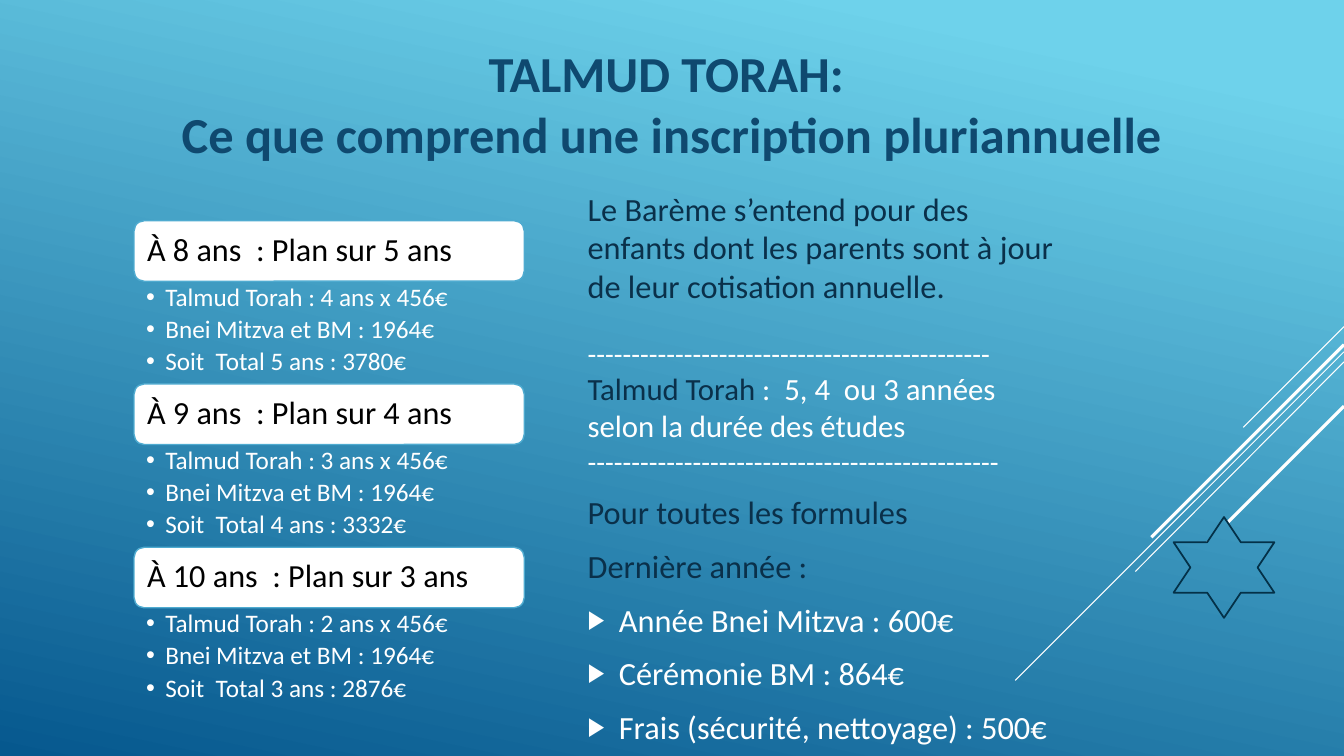
from dataclasses import dataclass

from lxml import etree
from pptx import Presentation
from pptx.dml.color import RGBColor
from pptx.enum.shapes import MSO_CONNECTOR, MSO_SHAPE
from pptx.enum.text import MSO_ANCHOR, PP_ALIGN
from pptx.oxml.ns import qn
from pptx.util import Inches, Pt

STRAIGHT = MSO_CONNECTOR.STRAIGHT
ROUNDED, STAR = MSO_SHAPE.ROUNDED_RECTANGLE, MSO_SHAPE.STAR_6_POINT
TOP, MIDDLE = MSO_ANCHOR.TOP, MSO_ANCHOR.MIDDLE
CENTER, JUSTIFY = PP_ALIGN.CENTER, PP_ALIGN.JUSTIFY


@dataclass
class Theme:
    font: str = "Calibri"
    sky: str = "6ED2EB"
    deep: str = "06588E"
    title: str = "0F496F"
    ink: str = "0A304A"
    star: str = "043148"
    border: str = "4FABD0"
    white: str = "FFFFFF"
    black: str = "000000"
    title_size: float = 36
    body_size: float = 23.1
    study_size: float = 22
    rule_size: float = 20.4
    plan_size: float = 23
    detail_size: float = 18


class SlideBuilder:
    def __init__(self, page, theme):
        self.page = page
        self.theme = theme

    def background(self, angle):
        """Fill the page with a gradient; angle is clockwise in degrees."""
        fill = self.page.background.fill
        fill.gradient()
        fill.gradient_angle = 360 - angle
        stops = ((0.1, self.theme.sky), (1, self.theme.deep))
        for stop, (position, color) in zip(fill.gradient_stops, stops):
            stop.position = position
            stop.color.rgb = RGBColor.from_string(color)

    def line(self, start, end, width):
        ends = [Inches(value) for value in (*start, *end)]
        connector = self.page.shapes.add_connector(STRAIGHT, *ends)
        connector.line.color.rgb = RGBColor.from_string(self.theme.white)
        connector.line.width = Pt(width)
        etree.SubElement(connector._element.spPr, qn("a:effectLst"))

    def shape(self, kind, place, border, width, fill=None):
        """Add a preset shape; without a fill it shows the page background."""
        box = self.page.shapes.add_shape(kind, *map(Inches, place))
        box.shadow.inherit = False
        box.line.color.rgb = RGBColor.from_string(border)
        box.line.width = Pt(width)
        if fill:
            box.fill.solid()
            box.fill.fore_color.rgb = RGBColor.from_string(fill)
        else:
            box._element.set("useBgFill", "1")

    def text(self, place, anchor=TOP, insets=(0.1, 0.05, 0.1, 0.05)):
        frame = self.page.shapes.add_textbox(*map(Inches, place)).text_frame
        sides = ("margin_left", "margin_top", "margin_right", "margin_bottom")
        formats = dict(zip(sides, map(Inches, insets)))
        formats.update(word_wrap=True, vertical_anchor=anchor)
        for name, value in formats.items():
            setattr(frame, name, value)
        return frame

    def paragraph(self, frame, spans, bullet=None, indent=0, bullet_size=100, **formats):
        """Add a paragraph of (text, size, color) spans; a line feed is a break."""
        first = frame.paragraphs[0]
        para = frame.add_paragraph() if first.runs else first
        for name, value in formats.items():
            setattr(para, name, value)
        if bullet:
            properties = para._p.get_or_add_pPr()
            properties.set("marL", str(Inches(indent)))
            properties.set("indent", str(-Inches(indent)))
            color = etree.SubElement(properties, qn("a:buClr"))
            etree.SubElement(color, qn("a:srgbClr"), val=self.theme.white)
            etree.SubElement(properties, qn("a:buSzPct"), val=str(bullet_size * 1000))
            etree.SubElement(properties, qn("a:buFont"), typeface="Arial")
            etree.SubElement(properties, qn("a:buChar"), char=bullet)
        for text, size, color in spans:
            for number, part in enumerate(text.split("\n")):
                if number:
                    para.add_line_break()
                if part:
                    span = para.add_run()
                    span.text = part
                    span.font.name = self.theme.font
                    span.font.size = Pt(size)
                    span.font.color.rgb = RGBColor.from_string(color)
        return para

    def plan(self, top, age, years, total):
        theme = self.theme
        left, width, height = 1.33, 3.87, 0.6
        self.shape(ROUNDED, (left, top, width, height), theme.border, 1, theme.white)
        heading = self.text((left + 0.03, top + 0.03, width - 0.06, height - 0.06),
                            MIDDLE, (0.1,) * 4)
        self.paragraph(heading, [(f"À {age} ans  : Plan sur {years} ans",
                                  theme.plan_size, theme.black)], line_spacing=0.9)
        details = self.text((left, top + height, width, 1.02),
                            insets=(0.12, 0.03, 0.18, 0.03))
        for item in (f"Talmud Torah : {years - 1} ans x 456€",
                     "Bnei Mitzva et BM : 1964€",
                     f"Soit  Total {years} ans : {total}€"):
            self.paragraph(details, [(item, theme.detail_size, theme.white)], "•", 0.19,
                           level=1, line_spacing=0.9, space_after=Pt(3.6))


def main():
    deck = Presentation()
    deck.slide_width, deck.slide_height = Inches(13.33), Inches(7.5)
    theme = Theme()
    builder = SlideBuilder(deck.slides.add_slide(deck.slide_layouts[6]), theme)
    builder.background(102)

    for start_y, end, width in (
        (3.24, (12.33, 4.24), 0.75),
        (3.49, (10.07, 6.75), 0.75),
        (3.59, (11.26, 5.67), 0.75),
        (3.42, (11.42, 5.33), 2.25),
        (4.03, (11.94, 5.42), 2.25),
    ):
        builder.line((13.33, start_y), end, width)
    builder.shape(STAR, (11.64, 5.13, 1, 1), theme.star, 1.25)

    title = builder.text((0.19, 0.37, 12.95, 1.31))
    for line in ("TALMUD TORAH: ", "Ce que comprend une inscription pluriannuelle"):
        para = builder.paragraph(title, [(line, theme.title_size, theme.title)],
                                 alignment=CENTER)
        para.runs[0].font.bold = True

    body = builder.text((5.73, 2.07, 4.83, 5.13), MIDDLE)
    spacing = {"space_before": Pt(4.5), "space_after": Pt(6)}
    builder.paragraph(body, [
        ("Le Barème s’entend pour des enfants dont les parents sont à jour "
         "de leur cotisation annuelle.\n\n", theme.body_size, theme.ink),
        ("-" * 46, theme.rule_size, theme.white),
        ("Talmud Torah ", theme.study_size, theme.ink),
        (":  5, 4  ou 3 années selon la durée des études\n", theme.study_size, theme.white),
        ("-" * 47, theme.rule_size, theme.white),
    ], **spacing)
    for line in ("Pour toutes les formules", "Dernière année : "):
        builder.paragraph(body, [(line, theme.body_size, theme.ink)],
                          alignment=JUSTIFY, **spacing)
    for line in ("Année Bnei Mitzva : 600€", "Cérémonie BM : 864€",
                 "Frais (sécurité, nettoyage) : 500€"):
        builder.paragraph(body, [(line, theme.body_size, theme.white)],
                          "▶", 0.31, 80, **spacing)

    for row, plan in enumerate(((8, 5, 3780), (9, 4, 3332), (10, 3, 2876))):
        builder.plan(2.19 + 1.62 * row, *plan)

    deck.save("out.pptx")


if __name__ == "__main__":
    main()
